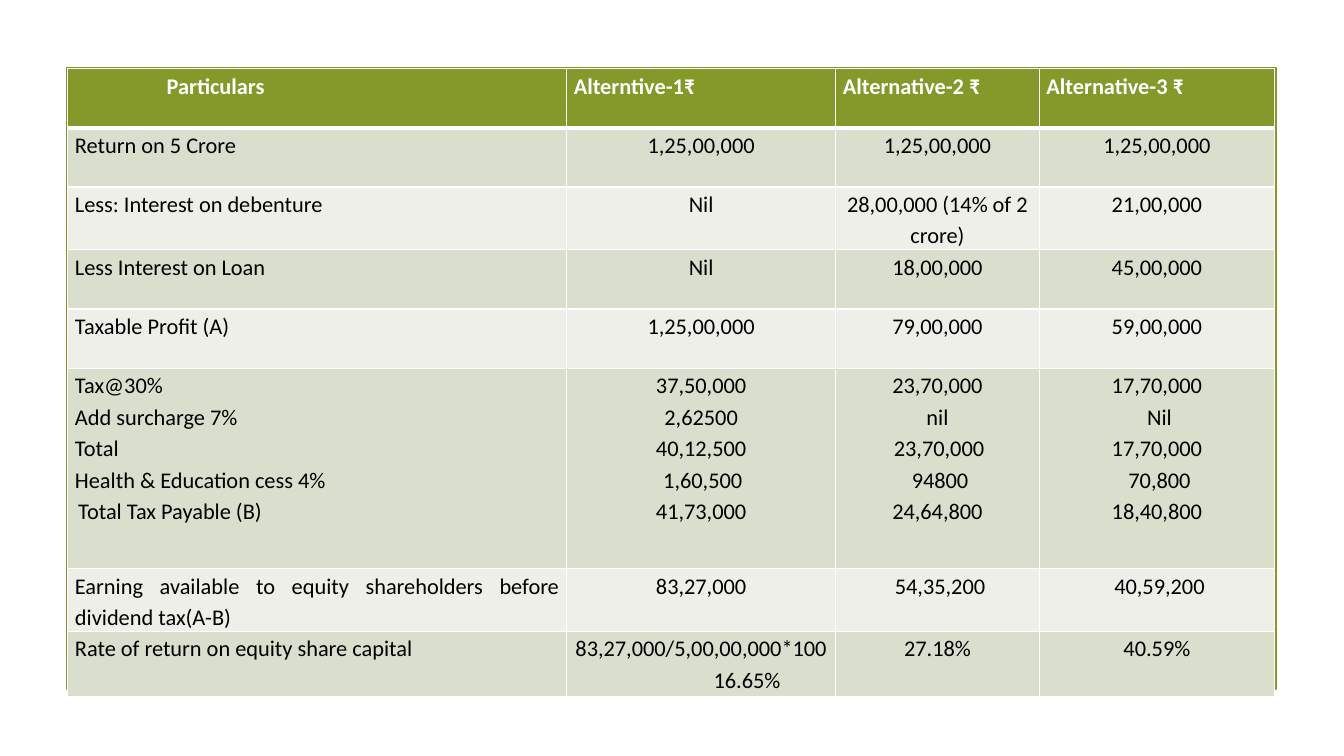
from dataclasses import dataclass

from lxml import etree
from pptx import Presentation
from pptx import util as u
from pptx.dml.color import RGBColor
from pptx.enum import shapes, text
from pptx.oxml import ns


@dataclass(frozen=True)
class Theme:
    font: str = "Calibri"
    size: int = 16
    line_spacing: float = 1.15
    accent: str = "83992A"
    white: str = "FFFFFF"
    black: str = "000000"
    bands: tuple = ("EDEFE8", "D9DECD")
    frame_line: float = 1.25
    grid_line: float = 1
    header_line: float = 3


THEME = Theme()
COLUMN_WIDTHS = (12.57, 6.78, 5.13, 5.93)
ROW_HEIGHTS = (1.49, 1.49, 1.58, 1.49, 1.49, 5.05, 1.58, 1.64)
ROWS = (
    ("Particulars", "Alterntive-1₹", "Alternative-2 ₹", "Alternative-3 ₹"),
    ("Return on 5 Crore", "1,25,00,000", "1,25,00,000", "1,25,00,000"),
    ("Less: Interest on debenture", "Nil", "28,00,000 (14% of 2 crore)", "21,00,000"),
    ("Less Interest on Loan", "Nil", "18,00,000", "45,00,000"),
    ("Taxable Profit (A)", "1,25,00,000", "79,00,000", "59,00,000"),
    (
        "Tax@30%\nAdd surcharge 7%\nTotal\nHealth & Education cess 4%\nTotal Tax Payable (B)",
        "37,50,000\n2,62500\n40,12,500\n1,60,500\n41,73,000",
        "23,70,000\nnil\n23,70,000\n94800\n24,64,800",
        "17,70,000\nNil\n17,70,000\n70,800\n18,40,800",
    ),
    (
        "Earning available to equity shareholders before dividend tax(A-B)",
        "83,27,000",
        "54,35,200",
        "40,59,200",
    ),
    (
        "Rate of return on equity share capital",
        "83,27,000/5,00,00,000*100\n16.65%",
        "27.18%",
        "40.59%",
    ),
)
LEFT_MARGINS = {(0, 0, 0): 2.31, (7, 1, 1): 2.31}
FIRST_LINE_INDENTS = {
    (5, 0, 4): 0.08,
    (5, 1, 3): 0.08,
    (5, 2, 2): 0.08,
    (5, 2, 3): 0.13,
    (5, 3, 1): 0.13,
    (5, 3, 3): 0.13,
    (6, 2, 0): 0.13,
    (6, 3, 0): 0.13,
}


def rgb(value):
    return RGBColor.from_string(value)


def add_frame(slide, left, top, width, height):
    frame = slide.shapes.add_shape(
        shapes.MSO_SHAPE.RECTANGLE, u.Cm(left), u.Cm(top), u.Cm(width), u.Cm(height)
    )
    frame.shadow.inherit = False
    frame.fill.background()
    frame.line.color.rgb = rgb(THEME.accent)
    frame.line.width = u.Pt(THEME.frame_line)


def set_borders(cell, row):
    properties = cell._tc.get_or_add_tcPr()
    widths = {side: THEME.grid_line for side in "LRTB"}
    if row == 0:
        widths["B"] = THEME.header_line
    if row == 1:
        widths["T"] = THEME.header_line
    for position, (side, width) in enumerate(widths.items()):
        line = etree.Element(ns.qn(f"a:ln{side}"), w=str(u.Pt(width)))
        fill = etree.SubElement(line, ns.qn("a:solidFill"))
        etree.SubElement(fill, ns.qn("a:srgbClr"), val=THEME.white)
        properties.insert(position, line)


def fill_cell(cell, content, row, column):
    header = row == 0
    cell.margin_left = cell.margin_right = u.Cm(0.18)
    cell.margin_top = cell.margin_bottom = 0
    cell.fill.solid()
    cell.fill.fore_color.rgb = rgb(THEME.accent if header else THEME.bands[row % 2])
    set_borders(cell, row)
    justified = header or column == 0
    frame = cell.text_frame
    for index, wording in enumerate(content.split("\n")):
        paragraph = frame.add_paragraph() if index else frame.paragraphs[0]
        paragraph.alignment = (
            text.PP_ALIGN.JUSTIFY if justified else text.PP_ALIGN.CENTER
        )
        paragraph.line_spacing = THEME.line_spacing
        place = (row, column, index)
        properties = paragraph._p.get_or_add_pPr()
        properties.set("marL", str(u.Cm(LEFT_MARGINS.get(place, 0))))
        properties.set("indent", str(u.Cm(FIRST_LINE_INDENTS.get(place, 0))))
        run = paragraph.add_run()
        run.text = wording
        run.font.name = THEME.font
        run.font.size = u.Pt(THEME.size)
        run.font.bold = header
        run.font.color.rgb = rgb(THEME.white if header else THEME.black)


def add_returns_table(slide, left, top):
    table = slide.shapes.add_table(
        len(ROWS),
        len(COLUMN_WIDTHS),
        u.Cm(left),
        u.Cm(top),
        u.Cm(sum(COLUMN_WIDTHS)),
        u.Cm(sum(ROW_HEIGHTS)),
    ).table
    for column, width in zip(table.columns, COLUMN_WIDTHS):
        column.width = u.Cm(width)
    for row, height in zip(table.rows, ROW_HEIGHTS):
        row.height = u.Cm(height)
    for row, contents in enumerate(ROWS):
        for column, content in enumerate(contents):
            fill_cell(table.cell(row, column), content, row, column)


def add_comparison_slide(presentation):
    slide = presentation.slides.add_slide(presentation.slide_layouts[6])
    left, top = 1.68, 1.7
    add_frame(slide, left, top, 30.48, 15.67)
    add_returns_table(slide, left + 0.03, top + 0.03)


def main():
    presentation = Presentation()
    presentation.slide_width = u.Cm(33.87)
    presentation.slide_height = u.Cm(19.05)
    add_comparison_slide(presentation)
    presentation.save("out.pptx")


if __name__ == "__main__":
    main()
